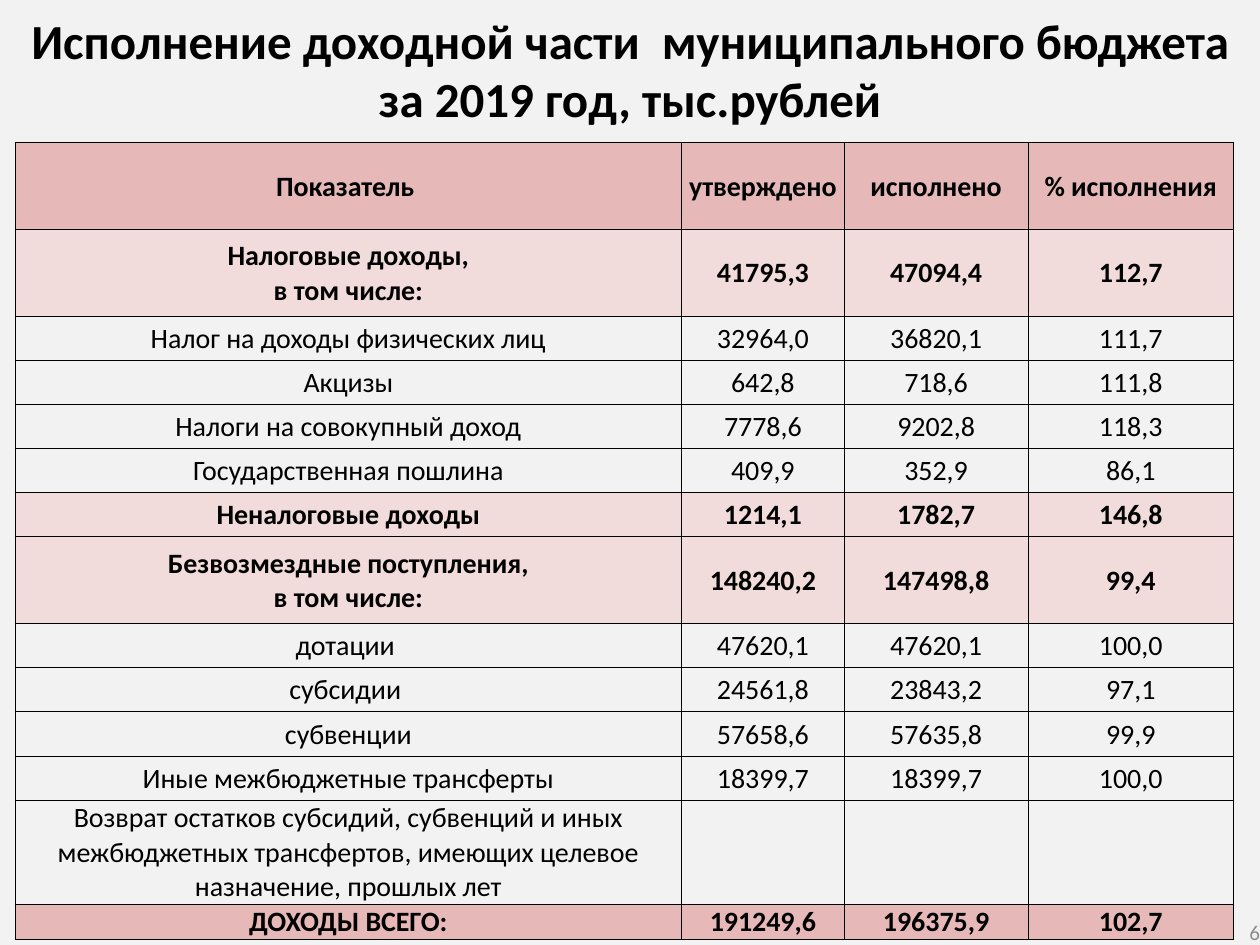
from lxml import etree
from pptx import Presentation, util as u
from pptx.dml.color import RGBColor
from pptx.enum import text
from pptx.oxml.ns import qn

FONT = "Calibri"
BLACK, GREY, PAGE = "000000", "8C8C8C", "F2F2F2"
FILLS = {"total": "E6B9B8", "group": "F2DCDB", "item": None}
TITLE = ["Исполнение доходной части  муниципального бюджета",
         "за 2019 год, тыс.рублей"]
PAGE_NUMBER = "6"

# kind, height in inches, cells
ROWS = [
    ("total", 0.69, ["Показатель ", "утверждено", "исполнено", "% исполнения"]),
    ("group", 0.69, ["Налоговые доходы,\nв том числе:", "41795,3", "47094,4", "112,7"]),
    ("item", 0.35, ["Налог на доходы физических лиц", "32964,0", "36820,1", "111,7"]),
    ("item", 0.35, ["Акцизы", "642,8", "718,6", "111,8"]),
    ("item", 0.35, ["Налоги на совокупный доход", "7778,6", "9202,8", "118,3"]),
    ("item", 0.35, ["Государственная пошлина", "409,9", "352,9", "86,1"]),
    ("group", 0.35, ["Неналоговые доходы", "1214,1", "1782,7", "146,8"]),
    ("group", 0.69, ["Безвозмездные поступления,\nв том числе:", "148240,2", "147498,8", "99,4"]),
    ("item", 0.35, ["дотации ", "47620,1", "47620,1", "100,0"]),
    ("item", 0.35, ["субсидии ", "24561,8", "23843,2", "97,1"]),
    ("item", 0.35, ["субвенции", "57658,6", "57635,8", "99,9"]),
    ("item", 0.35, ["Иные межбюджетные трансферты", "18399,7", "18399,7", "100,0"]),
    ("item", 0.35, ["Возврат остатков субсидий, субвенций и иных межбюджетных "
                    "трансфертов, имеющих целевое назначение, прошлых лет", "", "", ""]),
    ("total", 0.05, ["ДОХОДЫ ВСЕГО:", "191249,6", "196375,9", "102,7"]),
]
COLS = [5.29, 1.29, 1.46, 1.63]


def rgb(color):
    return RGBColor.from_string(color)


def write(p, lines, size, color=BLACK, bold=False, align=text.PP_ALIGN.CENTER):
    """Add each line as a run, with line breaks between them."""
    p.alignment = align
    for i, line in enumerate(lines):
        if i:
            p.add_line_break()
        r = p.add_run()
        r.text = line
        r.font.name, r.font.size, r.font.bold = FONT, u.Pt(size), bold
        r.font.color.rgb = rgb(color)


def set_margins(obj, left, top, right, bottom):
    obj.margin_left, obj.margin_top = u.Inches(left), u.Inches(top)
    obj.margin_right, obj.margin_bottom = u.Inches(right), u.Inches(bottom)


def add_borders(cell, color=BLACK, width=0.5):
    """Line all four sides; the lines must stand before the fill in tcPr."""
    tcPr = cell._tc.get_or_add_tcPr()
    for i, side in enumerate(("lnL", "lnR", "lnT", "lnB")):
        ln = etree.Element(qn("a:" + side), w=str(u.Pt(width)))
        fill = etree.SubElement(ln, qn("a:solidFill"))
        etree.SubElement(fill, qn("a:srgbClr"), val=color)
        tcPr.insert(i, ln)


def add_title(s):
    sp = s.shapes.title
    sp.left, sp.top, sp.width, sp.height = 0, 0, u.Inches(10), u.Inches(1.07)
    tf = sp.text_frame
    tf.word_wrap, tf.auto_size = True, text.MSO_AUTO_SIZE.NONE
    tf.vertical_anchor = text.MSO_ANCHOR.TOP
    set_margins(tf, 0.1, 0.08, 0.1, 0.05)
    write(tf.paragraphs[0], TITLE[:1], 28, bold=True)
    write(tf.add_paragraph(), TITLE[1:], 28, bold=True)


def add_budget_table(s):
    height = sum(h for _, h, _ in ROWS)
    table = s.shapes.add_table(len(ROWS), len(COLS), u.Inches(0.12), u.Inches(1.13),
                               u.Inches(sum(COLS)), u.Inches(height)).table
    table.first_row = table.horz_banding = False
    for col, width in zip(table.columns, COLS):
        col.width = u.Inches(width)
    for row, (kind, h, values) in zip(table.rows, ROWS):
        row.height = u.Inches(h)
        for cell, value in zip(row.cells, values):
            if FILLS[kind]:
                cell.fill.solid()
                cell.fill.fore_color.rgb = rgb(FILLS[kind])
            else:
                cell.fill.background()
            add_borders(cell)
            set_margins(cell, 0.01, 0.01, 0.01, 0)
            cell.vertical_anchor = text.MSO_ANCHOR.MIDDLE
            if value:
                write(cell.text_frame.paragraphs[0], value.split("\n"), 16,
                      bold=kind != "item")


def add_page_number(s):
    sp = s.shapes.add_textbox(u.Inches(7.67), u.Inches(7.29), u.Inches(2.33), u.Inches(0.21))
    tf = sp.text_frame
    tf.word_wrap = True
    tf.vertical_anchor = text.MSO_ANCHOR.MIDDLE
    set_margins(tf, 0, 0, 0, 0)
    write(tf.paragraphs[0], [PAGE_NUMBER], 12, GREY, align=text.PP_ALIGN.RIGHT)


def main():
    prs = Presentation()
    prs.slide_width, prs.slide_height = u.Inches(10), u.Inches(7.5)
    s = prs.slides.add_slide(prs.slide_layouts[5])
    s.background.fill.solid()
    s.background.fill.fore_color.rgb = rgb(PAGE)
    add_title(s)
    add_budget_table(s)
    add_page_number(s)
    prs.save("out.pptx")


if __name__ == "__main__":
    main()
